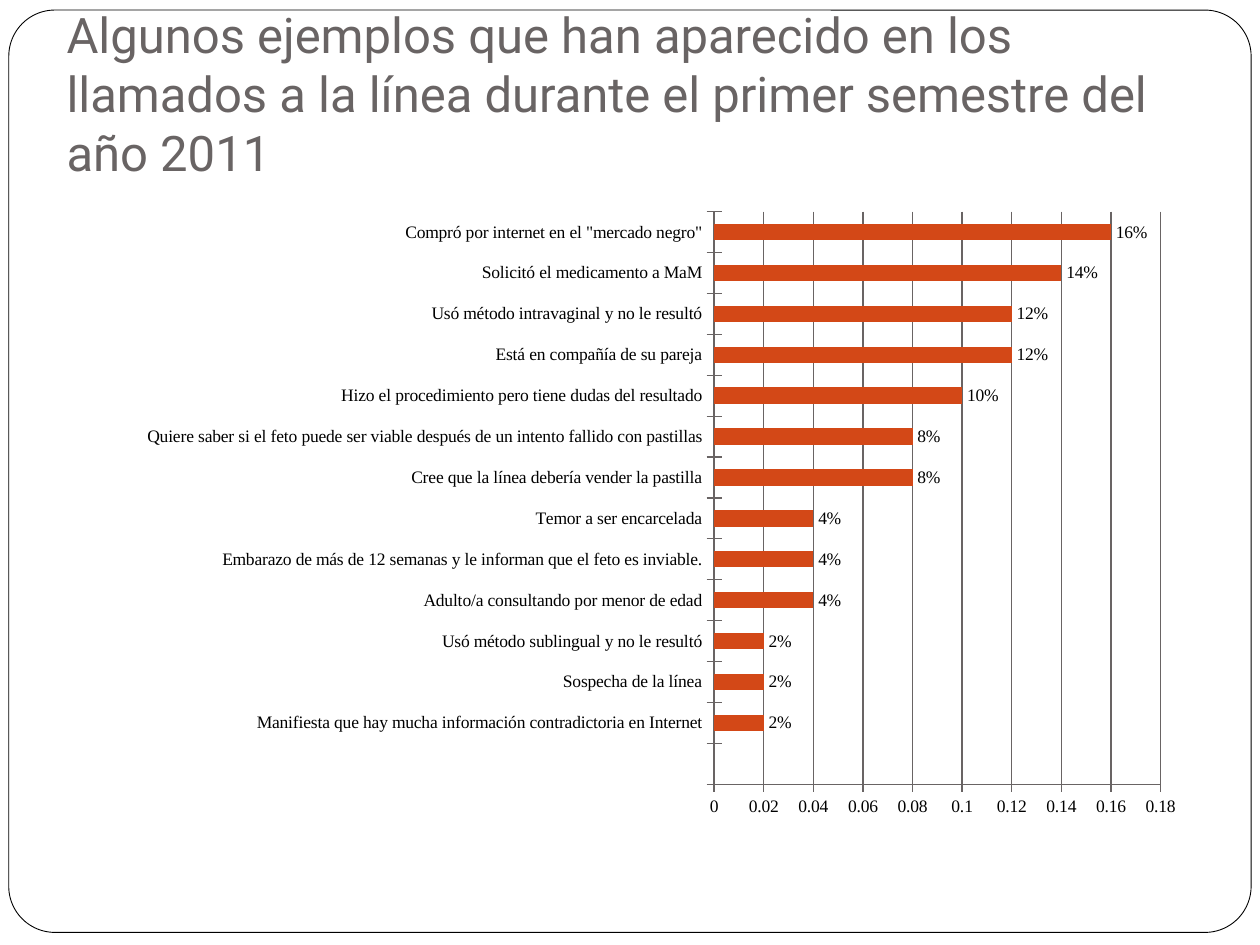
from dataclasses import dataclass

from pptx import Presentation
from pptx import util as u
from pptx.chart.data import CategoryChartData
from pptx.dml.color import RGBColor
from pptx.enum import chart as charts, shapes, text


@dataclass(frozen=True)
class Box:
    left: float
    top: float
    width: float
    height: float

    def lengths(self) -> tuple:
        return tuple(map(u.Inches, (self.left, self.top, self.width, self.height)))


@dataclass(frozen=True)
class Reason:
    label: str
    share: float | None


FRAME = Box(0.07, 0.08, 9.86, 7.32)
HEADING = Box(0.43, 0.29, 9, 1.25)
CHART = Box(1, 1.58, 8.5, 5)
TITLE = (
    "Algunos ejemplos que han aparecido en los llamados a la línea "
    "durante el primer semestre del año 2011"
)
REASONS = [
    Reason("", None),
    Reason("Manifiesta que hay mucha información contradictoria en Internet", 0.02),
    Reason("Sospecha de la línea", 0.02),
    Reason("Usó método sublingual y no le resultó", 0.02),
    Reason("Adulto/a consultando por menor de edad", 0.04),
    Reason("Embarazo de más de 12 semanas y le informan que el feto es inviable.", 0.04),
    Reason("Temor a ser encarcelada", 0.04),
    Reason("Cree que la línea debería vender la pastilla", 0.08),
    Reason("Quiere saber si el feto puede ser viable después de un intento fallido con pastillas", 0.08),
    Reason("Hizo el procedimiento pero tiene dudas del resultado", 0.1),
    Reason("Está en compañía de su pareja", 0.12),
    Reason("Usó método intravaginal y no le resultó", 0.12),
    Reason("Solicitó el medicamento a MaM", 0.14),
    Reason('Compró por internet en el "mercado negro"', 0.16),
]


def color(value: str) -> RGBColor:
    return RGBColor.from_string(value)


def apply(target, formats: dict) -> None:
    for name, value in formats.items():
        setattr(target, name, value)


def set_font(font, name: str, size: float, shade: str) -> None:
    apply(font, {"name": name, "size": u.Pt(size)})
    font.color.rgb = color(shade)


def set_line(line, shade: str, width: float) -> None:
    line.color.rgb = color(shade)
    line.width = u.Pt(width)


def draw_frame(slide) -> None:
    frame = slide.shapes.add_shape(shapes.MSO_SHAPE.ROUNDED_RECTANGLE, *FRAME.lengths())
    frame.adjustments[0] = 0.05
    frame.shadow.inherit = False
    frame.fill.solid()
    frame.fill.fore_color.rgb = color("FFFFFF")
    set_line(frame.line, "000000", 0.5)


def draw_heading(slide) -> None:
    heading = slide.shapes.add_textbox(*HEADING.lengths()).text_frame
    apply(heading, {
        "word_wrap": True,
        "vertical_anchor": text.MSO_ANCHOR.BOTTOM,
        "margin_left": u.Inches(0.1),
        "margin_top": u.Inches(0.05),
        "margin_right": u.Inches(0.1),
        "margin_bottom": u.Inches(0.1),
    })
    run = heading.paragraphs[0].add_run()
    run.text = TITLE
    set_font(run.font, "Roboto", 28, "696464")


def draw_reasons(slide) -> None:
    shares = CategoryChartData(number_format="0%")
    shares.categories = [reason.label for reason in REASONS]
    shares.add_series("Series 1", [reason.share for reason in REASONS])
    chart = slide.shapes.add_chart(
        charts.XL_CHART_TYPE.BAR_CLUSTERED, *CHART.lengths(), shares
    ).chart
    apply(chart, {"has_legend": False, "has_title": False})
    set_font(chart.font, "Times New Roman", 10, "000000")

    for axis in (chart.category_axis, chart.value_axis):
        apply(axis, {
            "major_tick_mark": charts.XL_TICK_MARK.CROSS,
            "minor_tick_mark": charts.XL_TICK_MARK.NONE,
        })
        set_line(axis.format.line, "696464", 0.75)
    chart.category_axis.has_major_gridlines = False
    apply(chart.value_axis, {
        "has_major_gridlines": True,
        "minimum_scale": 0,
        "maximum_scale": 0.18,
        "major_unit": 0.02,
    })
    set_line(chart.value_axis.major_gridlines.format.line, "696464", 0.75)
    apply(chart.value_axis.tick_labels, {
        "number_format": "General", "number_format_is_linked": False,
    })

    plot = chart.plots[0]
    apply(plot, {"gap_width": 150, "vary_by_categories": False, "has_data_labels": True})
    apply(plot.data_labels, {
        "show_value": True,
        "number_format": "0%",
        "number_format_is_linked": False,
        "position": charts.XL_LABEL_POSITION.OUTSIDE_END,
    })
    set_font(plot.data_labels.font, "Times New Roman", 10, "000000")
    bars = plot.series[0].format.fill
    bars.solid()
    bars.fore_color.rgb = color("D34817")


def main() -> None:
    deck = Presentation()
    apply(deck, {"slide_width": u.Inches(10), "slide_height": u.Inches(7.5)})
    slide = deck.slides.add_slide(deck.slide_layouts[6])
    draw_frame(slide)
    draw_heading(slide)
    draw_reasons(slide)
    deck.save("out.pptx")


if __name__ == "__main__":
    main()
